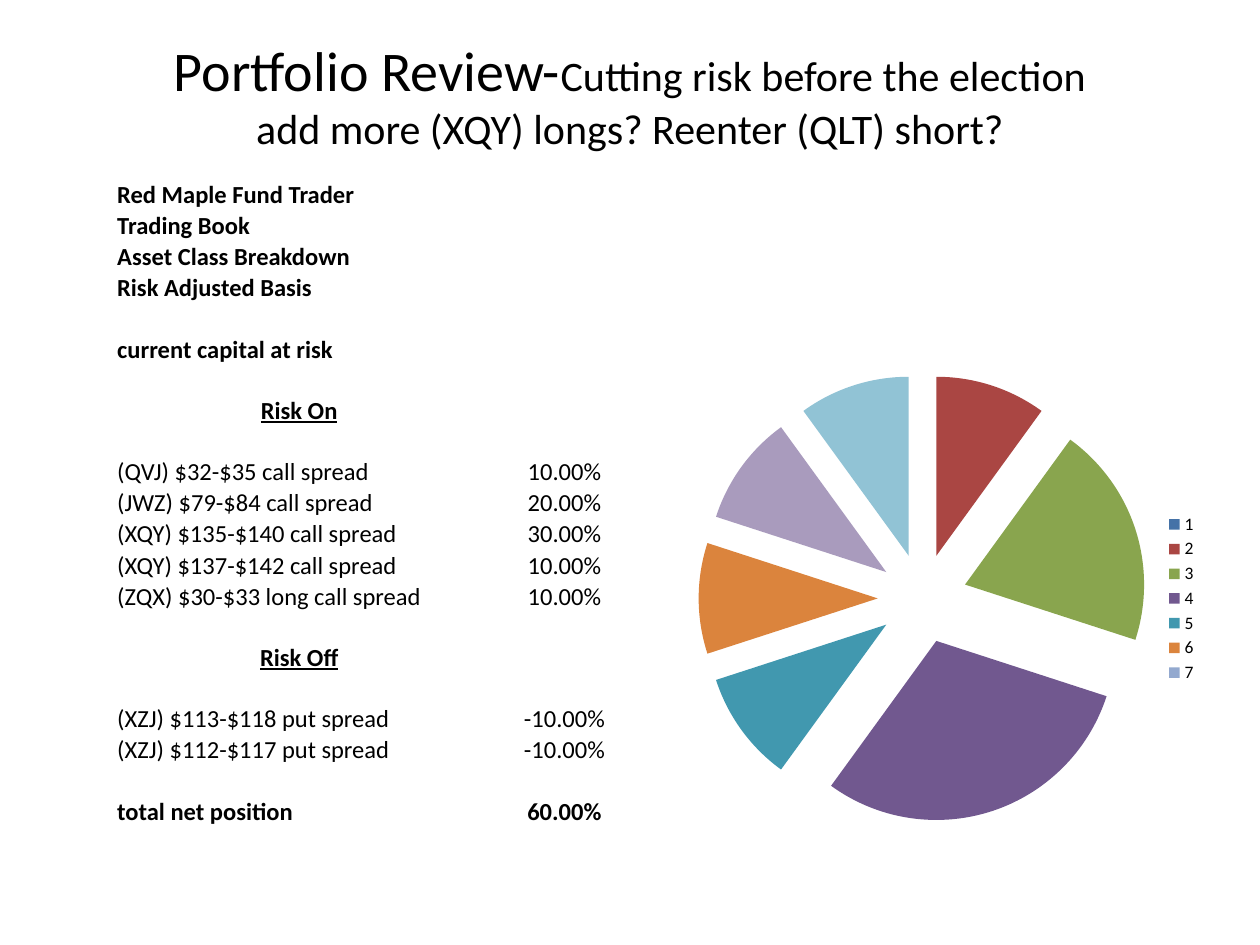
"""Build the portfolio review slide: position table and exploded risk pie."""
from lxml import etree
from pptx import Presentation
from pptx.chart.data import CategoryChartData
from pptx.dml.color import RGBColor
from pptx.enum.chart import XL_CHART_TYPE, XL_LEGEND_POSITION
from pptx.enum.text import MSO_ANCHOR, PP_ALIGN
from pptx.oxml import parse_xml
from pptx.oxml.ns import nsdecls, qn
from pptx.util import Inches, Pt

PIE, RIGHT = XL_CHART_TYPE.PIE, XL_LEGEND_POSITION.RIGHT
TOP, BOTTOM = MSO_ANCHOR.TOP, MSO_ANCHOR.BOTTOM
LEFT, CENTER = PP_ALIGN.LEFT, PP_ALIGN.CENTER
FONT = "Calibri"
COLORS = {
    "text": "000000",
    "1": "4572A7", "2": "AA4643", "3": "89A54E", "4": "71588F",
    "5": "4198AF", "6": "DB843D", "7": "93A9CF", "8": "D19392",
    "9": "B9CD96", "10": "A99BBD", "11": "91C3D5",
}


def write(paragraph, text, size=14, bold=False, underline=False, align=LEFT):
    paragraph.alignment = align
    run = paragraph.add_run()
    run.text = text
    run.font.name, run.font.size = FONT, Pt(size)
    run.font.bold, run.font.underline = bold, underline
    run.font.color.rgb = RGBColor.from_string(COLORS["text"])


prs = Presentation()
prs.slide_width, prs.slide_height = Inches(10), Inches(7.5)
slide = prs.slides.add_slide(prs.slide_layouts[5])

title = slide.shapes.title
title.left, title.top = Inches(0.5), Inches(0.25)
title.width, title.height = Inches(9), Inches(1.67)
title.text_frame.vertical_anchor = TOP
title.text_frame.margin_top = Inches(0.03)
headline = title.text_frame.paragraphs[0]
write(headline, "Portfolio Review-", size=32, align=CENTER)
write(headline, "Cutting risk before the election", size=24, align=CENTER)
headline.add_line_break()
write(headline, "add more (XQY) longs? Reenter (QLT) short?", size=24, align=CENTER)

exposure = CategoryChartData()
exposure.categories = [str(number) for number in range(1, 12)]
exposure.add_series("Series 1", [None, 10, 20, 30, 10, 10, None, None, None, -10, -10])
pie = slide.shapes.add_chart(
    PIE, Inches(5.42), Inches(2.33), Inches(4.18), Inches(4.84), exposure).chart
pie.has_title = False
pie.font.name, pie.font.size = FONT, Pt(10)
pie.font.color.rgb = RGBColor.from_string(COLORS["text"])
pie.has_legend = True
pie.legend.position = RIGHT
pie.legend.include_in_layout = False
plot = pie.plots[0]
plot.vary_by_categories = True
slices = plot.series[0]
for index in range(11):
    fill = slices.points[index].format.fill
    fill.solid()
    fill.fore_color.rgb = RGBColor.from_string(COLORS[str(index + 1)])
slices._element.find(qn("c:dPt")).addprevious(
    parse_xml(f'<c:explosion {nsdecls("c")} val="25"/>'))

legend_position = pie.legend._element.find(qn("c:legendPos"))
for hidden in range(10, 6, -1):
    legend_position.addnext(parse_xml(
        f'<c:legendEntry {nsdecls("c")}><c:idx val="{hidden}"/>'
        '<c:delete val="1"/></c:legendEntry>'))

plot_area = pie._chartSpace.chart.plotArea
for automatic in plot_area.findall(qn("c:layout")):
    plot_area.remove(automatic)
layout = etree.Element(qn("c:layout"))
manual = etree.SubElement(layout, qn("c:manualLayout"))
for tag, value in (("layoutTarget", "inner"), ("xMode", "edge"), ("yMode", "edge"),
                   ("x", "0.03"), ("y", "0.13"), ("w", "0.85"), ("h", "0.74")):
    etree.SubElement(manual, qn(f"c:{tag}"), val=value)
plot_area.insert(0, layout)

HEADING = {"bold": True}
SECTION = {"bold": True, "underline": True, "align": CENTER}
positions = [
    ("Red Maple Fund Trader", "", HEADING),
    ("Trading Book", "", HEADING),
    ("Asset Class Breakdown", "", HEADING),
    ("Risk Adjusted Basis", "", HEADING),
    ("", "", {}),
    ("current capital at risk", "", HEADING),
    ("", "", {}),
    ("Risk On", "", SECTION),
    ("", "", {}),
    ("(QVJ) $32-$35 call spread", "10.00%", {}),
    ("(JWZ) $79-$84 call spread", "20.00%", {}),
    ("(XQY) $135-$140 call spread", "30.00%", {}),
    ("(XQY) $137-$142 call spread", "10.00%", {}),
    ("(ZQX) $30-$33 long call spread", "10.00%", {}),
    ("", "", {}),
    ("Risk Off", "", SECTION),
    ("", "", {}),
    ("(XZJ) $113-$118 put spread", "-10.00%", {}),
    ("(XZJ) $112-$117 put spread", "-10.00%", {}),
    ("", "", {}),
    ("total net position", "60.00%", HEADING),
]
book = slide.shapes.add_table(
    len(positions), 2, Inches(0.92), Inches(1.42), Inches(4.21), Inches(5.06)).table
book.first_row = book.horz_banding = False
book.columns[0].width, book.columns[1].width = Inches(2.91), Inches(1.3)
for row, (position, share, style) in zip(book.rows, positions):
    row.height = Inches(0.24)
    for cell, text, emphasis in zip(row.cells, (position, share),
                                    (style, {**style, "align": CENTER})):
        cell.fill.background()
        cell.vertical_anchor = BOTTOM
        cell.margin_left = cell.margin_right = cell.margin_top = Inches(0.01)
        cell.margin_bottom = 0
        line = cell.text_frame.paragraphs[0]
        if text:
            write(line, text, **emphasis)
        else:
            etree.SubElement(line._p, qn("a:endParaRPr"), sz="1200")

prs.save("out.pptx")
